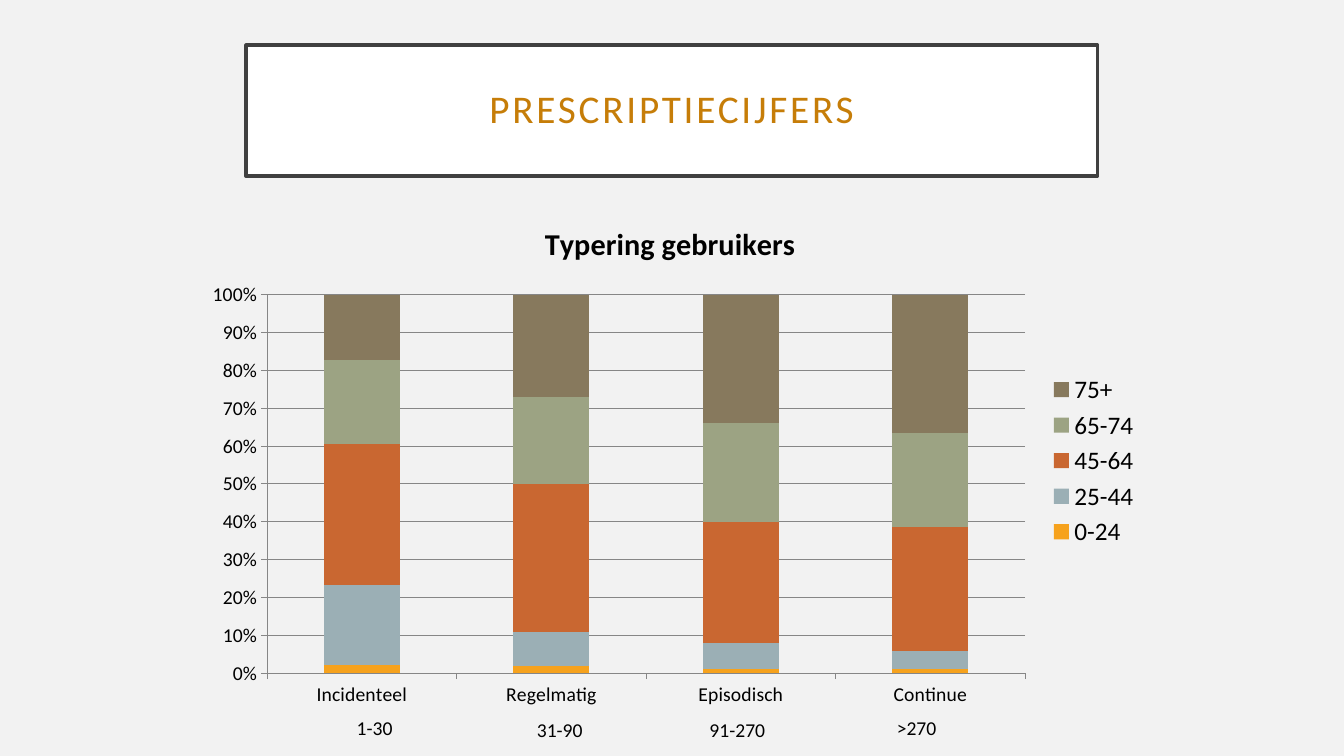
from lxml import etree
from pptx import Presentation
from pptx.chart.data import CategoryChartData
from pptx.dml.color import RGBColor
from pptx.enum.chart import XL_CHART_TYPE, XL_LEGEND_POSITION, XL_TICK_MARK
from pptx.enum.text import MSO_ANCHOR, MSO_AUTO_SIZE, PP_ALIGN
from pptx.oxml.ns import qn
from pptx.util import Cm, Pt

# Content
TITLE = "PRESCRIPTIECIJFERS"
HEAD = "Typering gebruikers"
KINDS = ["Incidenteel", "Regelmatig", "Episodisch", "Continue"]
AGES = [
    ("0-24", (2, 2, 1, 1), "amber"),
    ("25-44", (21, 9, 7, 5), "blue"),
    ("45-64", (37, 39, 32, 33), "rust"),
    ("65-74", (22, 23, 26, 25), "green"),
    ("75+", (17, 27, 34, 37), "brown"),
]
# Text, left, top and width in cm
DAYS = [
    ("1-30", 8.74, 17.91, 1.6),
    ("31-90", 13.28, 17.96, 1.8),
    ("91-270", 17.63, 17.96, 2.21),
    (">270", 22.35, 17.91, 1.8),
]
PLOT = {"x": 0.08, "y": 0.18, "w": 0.79, "h": 0.73}
FONT = "Calibri"
HUES = {
    "back": "F2F2F2", "white": "FFFFFF", "frame": "404040",
    "title": "C67D08", "text": "000000", "grid": "868686",
    "amber": "F6A21D", "blue": "9BAFB5", "rust": "C96731",
    "green": "9CA383", "brown": "87795D",
}


def hue(name):
    return RGBColor.from_string(HUES[name])


def style(font, size, color="text", bold=False):
    font.name, font.size, font.bold = FONT, Pt(size), bold
    font.color.rgb = hue(color)


def write(frame, text, size=14, color="text", bold=False, align=None,
          lead=None, track=None):
    para = frame.paragraphs[0]
    para.alignment, para.line_spacing = align, lead
    run = para.add_run()
    run.text = text
    style(run.font, size, color, bold)
    if track:
        run.font._element.set("spc", str(track * 100))


deck = Presentation()
deck.slide_width, deck.slide_height = Cm(33.87), Cm(19.05)
slide = deck.slides.add_slide(deck.slide_layouts[5])
slide.background.fill.solid()
slide.background.fill.fore_color.rgb = hue("back")

# Framed title
title = slide.shapes.title
title.left, title.top = Cm(6.2), Cm(1.14)
title.width, title.height = Cm(21.46), Cm(3.3)
title.fill.solid()
title.fill.fore_color.rgb = hue("white")
title.line.color.rgb = hue("frame")
title.line.width = Pt(2.5)
frame = title.text_frame
frame.vertical_anchor = MSO_ANCHOR.MIDDLE
frame.margin_left = frame.margin_right = Cm(0.5)
frame.margin_top = frame.margin_bottom = Cm(0.5)
write(frame, TITLE, size=28, color="title", align=PP_ALIGN.CENTER,
      lead=0.9, track=2)

# Stacked chart
data = CategoryChartData()
data.categories = KINDS
for age, vals, _ in AGES:
    data.add_series(age, vals)
chart = slide.shapes.add_chart(
    XL_CHART_TYPE.COLUMN_STACKED_100, Cm(4.8), Cm(5.08), Cm(24.18), Cm(13.06),
    data).chart
style(chart.font, 18)
chart.has_title = True
write(chart.chart_title.text_frame, HEAD, size=21.6, bold=True)
chart.has_legend = True
chart.legend.position = XL_LEGEND_POSITION.RIGHT
chart.legend.include_in_layout = False
style(chart.legend.font, 18)
plot = chart.plots[0]
plot.gap_width, plot.overlap, plot.vary_by_categories = 150, 100, False
for bar, (_, _, color) in zip(plot.series, AGES):
    bar.format.fill.solid()
    bar.format.fill.fore_color.rgb = hue(color)

# Axes and grid
rise = chart.value_axis
rise.has_major_gridlines = True
rise.minimum_scale, rise.maximum_scale, rise.major_unit = 0, 1, 0.1
rise.tick_labels.number_format = "0%"
rise.tick_labels.number_format_is_linked = False
for axis in (chart.category_axis, rise):
    axis.major_tick_mark = XL_TICK_MARK.OUTSIDE
    style(axis.tick_labels.font, 14)
for part in (chart.category_axis, rise, rise.major_gridlines):
    part.format.line.color.rgb = hue("grid")
    part.format.line.width = Pt(0.75)

# Fixed plot area
area = chart._chartSpace.chart.plotArea
for old in area.findall(qn("c:layout")):
    area.remove(old)
layout = etree.Element(qn("c:layout"))
area.insert(0, layout)
inner = etree.SubElement(layout, qn("c:manualLayout"))
rules = {"layoutTarget": "inner", "xMode": "edge", "yMode": "edge", **PLOT}
for tag, val in rules.items():
    etree.SubElement(inner, qn("c:" + tag)).set("val", str(val))

# Day ranges under the columns
for text, left, top, width in DAYS:
    box = slide.shapes.add_textbox(Cm(left), Cm(top), Cm(width), Cm(0.86))
    box.text_frame.word_wrap = True
    box.text_frame.auto_size = MSO_AUTO_SIZE.SHAPE_TO_FIT_TEXT
    write(box.text_frame, text)

deck.save("out.pptx")
